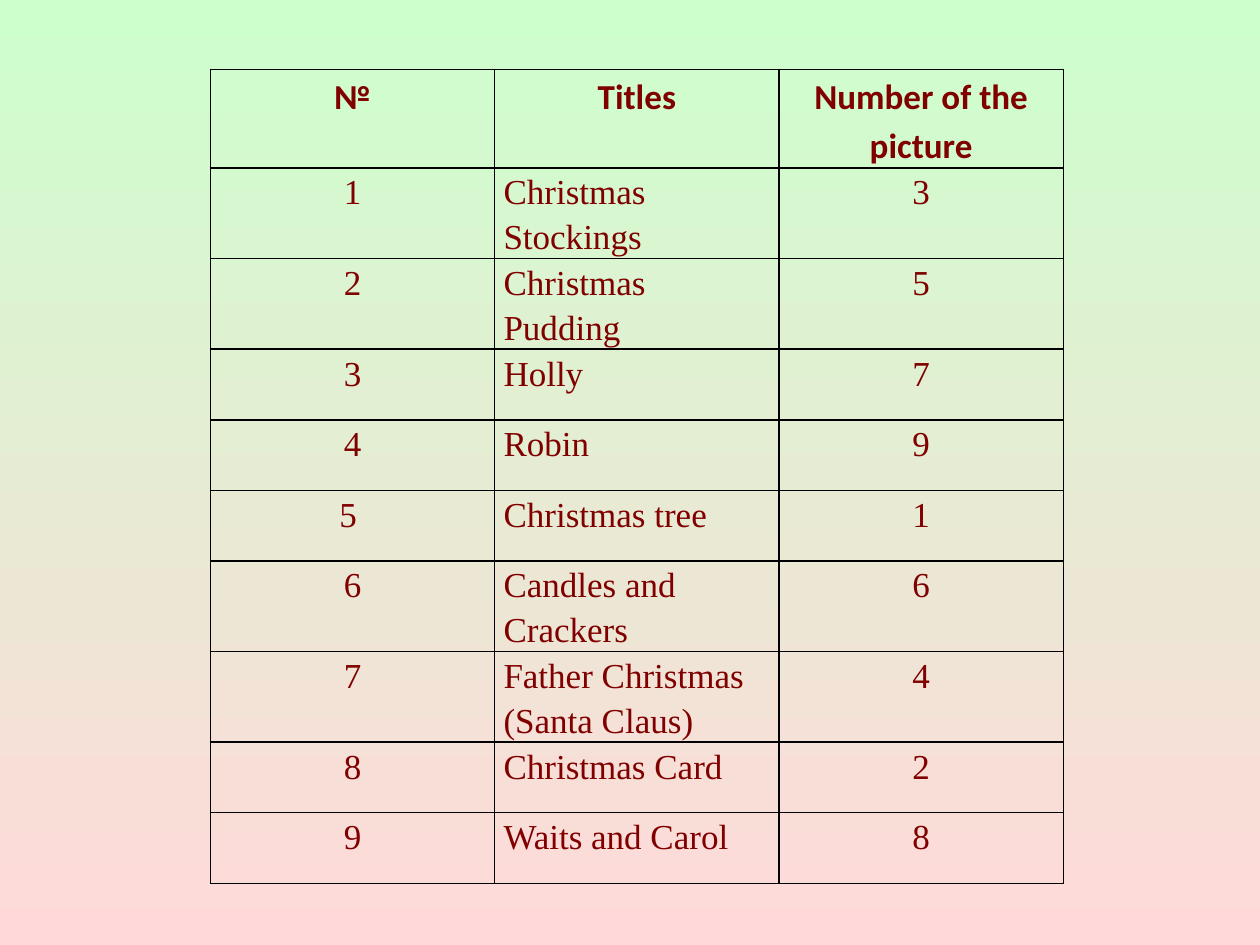
from dataclasses import dataclass

from lxml import etree
from pptx import Presentation
from pptx.dml.color import RGBColor
from pptx.enum import text
from pptx.oxml import ns
from pptx.util import Pt

PX = 9144  # EMU in one px, 100 px to the inch


@dataclass(frozen=True)
class Theme:
    top: str = "CDFFCD"
    bottom: str = "FFD9D9"
    ink: str = "800000"
    border: str = "000000"
    head_font: str = "Calibri"
    body_font: str = "Times New Roman"
    size: int = 20
    border_width: int = 1
    spacing: float = 1.15


THEME = Theme()

HEADERS = ("№", "Titles", "Number of the picture")
# Number, title, picture number, row height in px
ROWS = (
    ("1", "Christmas Stockings", "3", 72),
    ("2", "Christmas Pudding", "5", 72),
    ("3", "Holly", "7", 56),
    ("4", "Robin", "9", 56),
    ("5 ", "Christmas tree", "1", 56),
    ("6", "Candles and Crackers", "6", 72),
    ("7", "Father Christmas (Santa Claus)", "4", 72),
    ("8", "Christmas Card", "2", 56),
    ("9", "Waits and Carol", "8", 56),
)
HEADER_HEIGHT = 72
TITLE_COLUMN = 1


def px(n):
    return n * PX


def write(tf, content, *, font, bold=False, align=None):
    p = tf.paragraphs[0]
    p.alignment = align
    p.line_spacing = THEME.spacing
    r = p.add_run()
    r.text = content
    r.font.name = font
    r.font.size = Pt(THEME.size)
    r.font.bold = bold
    r.font.color.rgb = RGBColor.from_string(THEME.ink)


def add_borders(cell):
    tc_pr = cell._tc.get_or_add_tcPr()
    for side in ("a:lnL", "a:lnR", "a:lnT", "a:lnB"):
        ln = etree.SubElement(tc_pr, ns.qn(side), w=str(Pt(THEME.border_width)))
        fill = etree.SubElement(ln, ns.qn("a:solidFill"))
        etree.SubElement(fill, ns.qn("a:srgbClr"), val=THEME.border)


def paint_background(s):
    fill = s.background.fill
    fill.gradient()
    fill.gradient_angle = 270  # top to bottom
    for stop, color in zip(fill.gradient_stops, (THEME.top, THEME.bottom)):
        stop.color.rgb = RGBColor.from_string(color)


def add_titles_table(s, left, top, width):
    heights = [HEADER_HEIGHT] + [row[-1] for row in ROWS]
    lines = [HEADERS] + [row[:-1] for row in ROWS]
    table = s.shapes.add_table(
        len(lines), len(HEADERS), px(left), px(top), px(width), px(sum(heights))
    ).table
    table.first_row = table.horz_banding = False
    for row, height in zip(table.rows, heights):
        row.height = px(height)

    for i, line in enumerate(lines):
        header = i == 0
        for j, content in enumerate(line):
            cell = table.cell(i, j)
            cell.margin_left = cell.margin_right = px(7)
            cell.margin_top = cell.margin_bottom = 0
            add_borders(cell)
            cell.fill.background()
            centred = header or j != TITLE_COLUMN
            write(
                cell.text_frame,
                content,
                font=THEME.head_font if header else THEME.body_font,
                bold=header,
                align=text.PP_ALIGN.CENTER if centred else text.PP_ALIGN.LEFT,
            )


def main():
    prs = Presentation()
    prs.slide_width, prs.slide_height = px(1000), px(750)
    s = prs.slides.add_slide(prs.slide_layouts[6])

    # Background
    paint_background(s)

    # Table of titles and picture numbers
    add_titles_table(s, left=167, top=55, width=677)

    prs.save("out.pptx")


if __name__ == "__main__":
    main()
